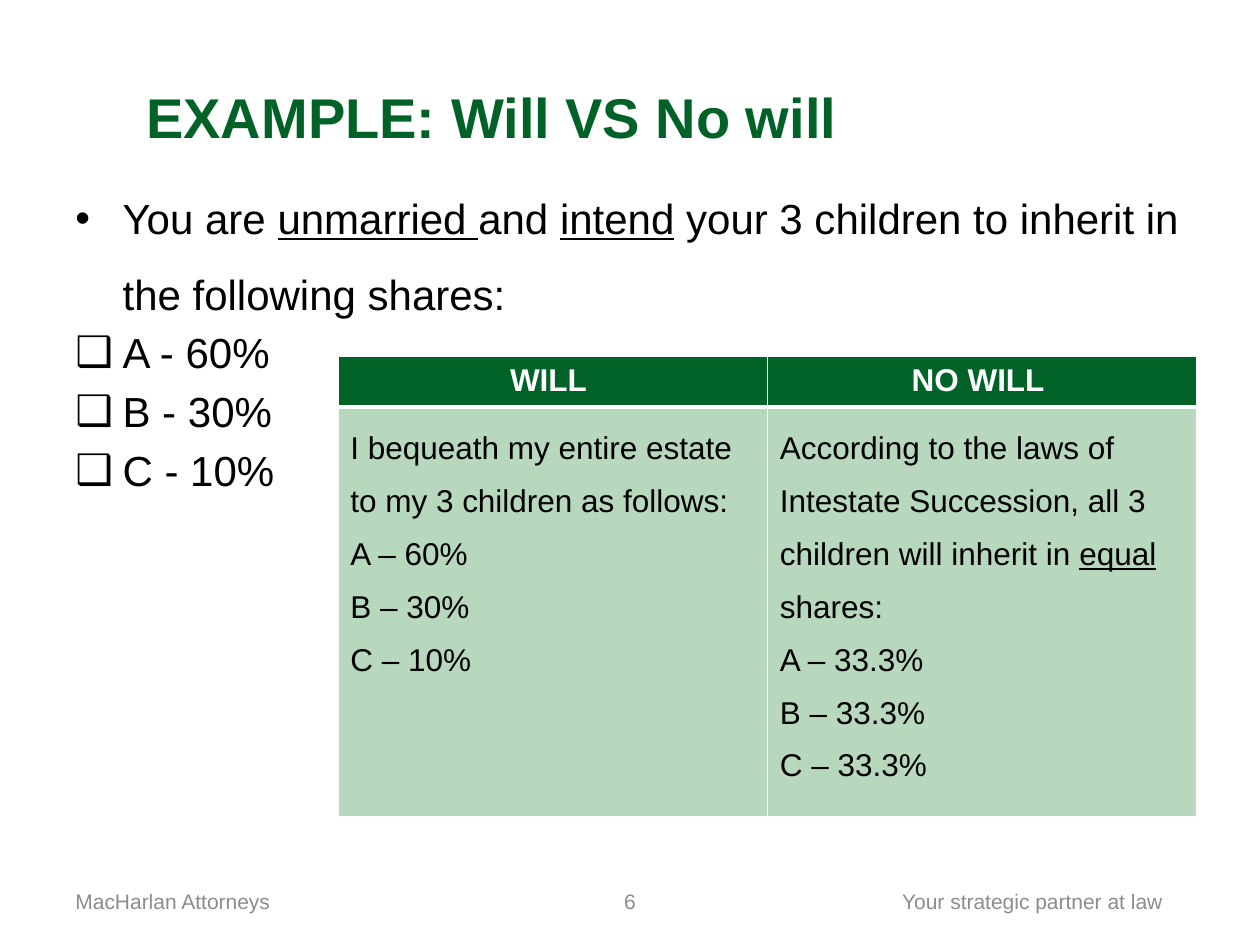
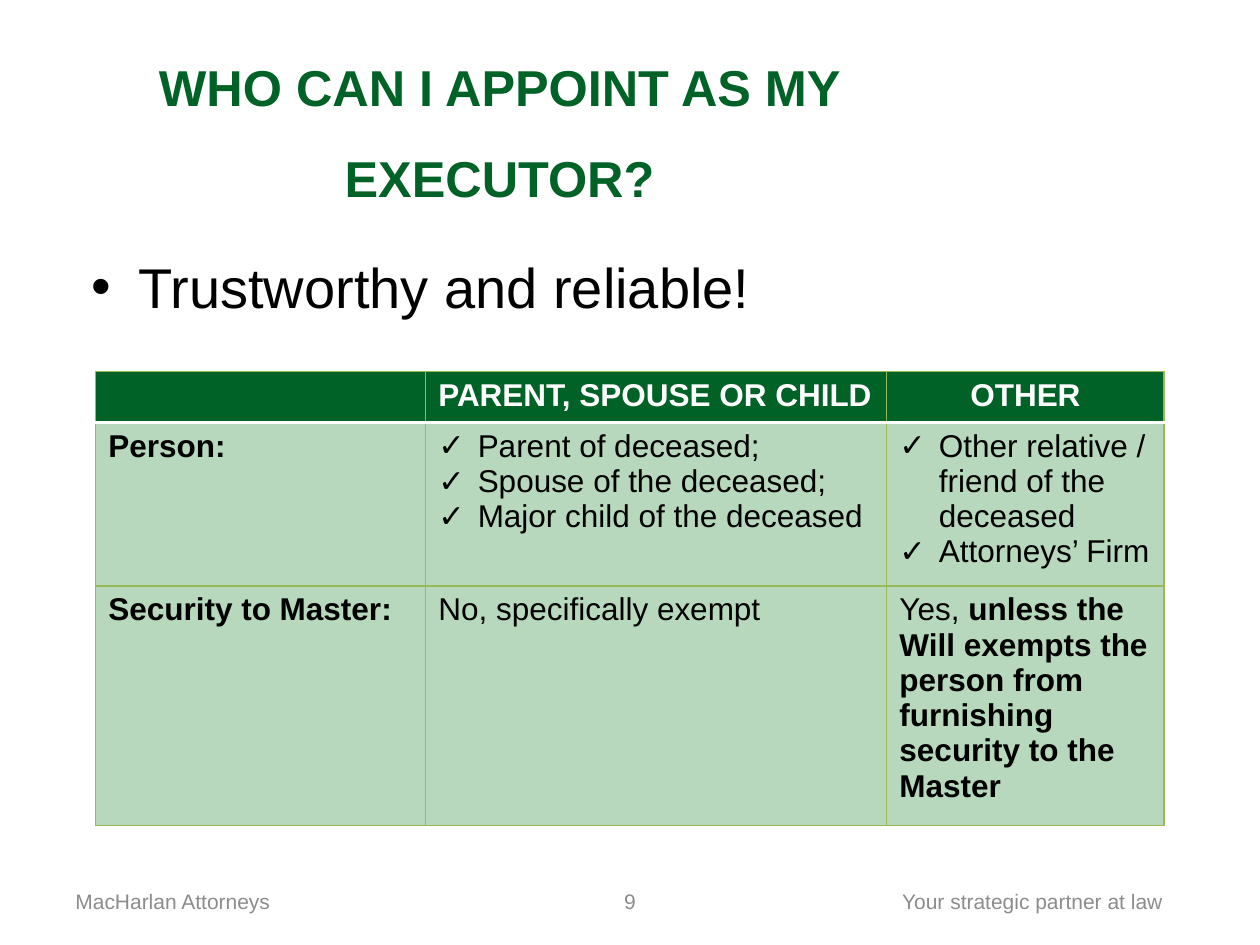
from dataclasses import dataclass

from lxml import etree
from pptx import Presentation
from pptx.dml.color import RGBColor
from pptx.enum import text
from pptx.oxml import ns
from pptx.util import Pt

GREEN, PALE_GREEN, OLIVE = "006227", "B7D8BC", "98B955"
WHITE, BLACK, GREY = "FFFFFF", "000000", "8C8C8C"
FONT = "Arial"
LEFT, CENTER = text.PP_ALIGN.LEFT, text.PP_ALIGN.CENTER
TOP, MIDDLE = text.MSO_ANCHOR.TOP, text.MSO_ANCHOR.MIDDLE


@dataclass
class Para:
    """One paragraph; spans are (wording, marks) pairs with marks from 'b' and 'u'."""
    spans: list
    align: object = LEFT
    spacing: float = None
    before: float = 0
    bullet: str = ""
    indent: float = 27


def plain(wording, marks="", **layout):
    return Para([(wording, marks)], **layout)


def ticks(*items):
    return [plain(item, bullet="✓", indent=22.5) for item in items]


def spaced(*items):
    return [plain(item, spacing=1.5) for item in items]


FOOTERS = [  # left, width, wording, alignment
    (36, 168, "MacHarlan Attorneys", LEFT),
    (276, 168, "{number}", CENTER),
    (496, 188, "Your strategic partner at law", CENTER),
]

SLIDES = [
    {
        "number": 6,
        "title": plain("EXAMPLE: Will VS No will ", "b", align=CENTER),
        "title_size": 32,
        "body": [
            Para([("You are ", ""), ("unmarried ", "u"), ("and ", ""), ("intend", "u"),
                  (" your 3 children to inherit in the following shares:", "")],
                 spacing=1.5, bullet="•"),
            *(plain(share, before=4.8, bullet="❑")
              for share in ("A - 60%", "B - 30%", "C - 10%")),
        ],
        "body_at": (36, 92),
        "body_size": 24,
        "table": {
            "at": (193, 203.8),
            "columns": [245.5, 245.5],
            "rows": [28, 222],
            "grid": (WHITE, 1),
            "rule": (WHITE, 3),
            "cells": [
                [[plain("WILL ", "b", align=CENTER)],
                 [plain("NO WILL ", "b", align=CENTER)]],
                [spaced("I bequeath my entire estate to my 3 children as follows:",
                        "A – 60%", "B – 30%", "C – 10%"),
                 [Para([("According to the laws of Intestate Succession, "
                         "all 3 children will inherit in ", ""),
                        ("equal ", "u"), ("shares:", "")], spacing=1.5),
                  *spaced("A – 33.3%", "B – 33.3%", "C – 33.3%")]],
            ],
        },
    },
    {
        "number": 9,
        "title": plain("WHO CAN I APPOINT AS MY EXECUTOR?", "b", align=CENTER, spacing=1.5),
        "title_size": 28.8,
        "body": [plain("Trustworthy and reliable!", bullet="•")],
        "body_at": (45, 140.5),
        "body_size": 32,
        "table": {
            "at": (54.7, 212.4),
            "columns": [188.6, 263.5, 158.4],
            "rows": [27, 88, 128],
            "grid": (OLIVE, 0.75),
            "rule": (WHITE, 2),
            "cells": [
                [[], [plain("PARENT, SPOUSE OR CHILD", "b")],
                 [plain("OTHER", "b", align=CENTER)]],
                [[plain("Person:", "b")],
                 ticks("Parent of deceased;", "Spouse of the deceased;",
                       "Major child of the deceased"),
                 ticks("Other relative / friend of the deceased", "Attorneys’ Firm")],
                [[plain("Security to Master:", "b")],
                 [plain("No, specifically exempt")],
                 [Para([("Yes, ", ""),
                        ("unless the Will exempts the person from furnishing "
                         "security to the Master", "b")])]],
            ],
        },
    },
]


def color(value):
    return RGBColor.from_string(value)


def add_bullet(para, mark, indent):
    props = para._p.get_or_add_pPr()
    props.set("marL", str(Pt(indent)))
    props.set("indent", str(-Pt(indent)))
    etree.SubElement(props, ns.qn("a:buFont"), typeface=FONT)
    etree.SubElement(props, ns.qn("a:buChar"), char=mark)


def write(frame, paras, size, ink):
    """Fill a text frame with paragraphs in one size and colour."""
    for index, item in enumerate(paras):
        para = frame.add_paragraph() if index else frame.paragraphs[0]
        para.alignment = item.align
        if item.bullet:
            add_bullet(para, item.bullet, item.indent)
        if item.spacing:
            para.line_spacing = item.spacing
        if item.before:
            para.space_before = Pt(item.before)
        for wording, marks in item.spans:
            span = para.add_run()
            span.text = wording
            font = span.font
            font.name, font.size, font.color.rgb = FONT, Pt(size), color(ink)
            font.bold, font.underline = "b" in marks, "u" in marks


def add_text(page, at, paras, size, ink, anchor):
    box = page.shapes.add_textbox(*map(Pt, at))
    frame = box.text_frame
    frame.word_wrap = True
    frame.vertical_anchor = anchor
    write(frame, paras, size, ink)


def set_borders(cell, sides):
    """Draw cell borders; they must precede the fill in the cell properties."""
    props = cell._tc.get_or_add_tcPr()
    for place, side in enumerate("LRTB"):
        ink, width = sides[side]
        line = etree.Element(ns.qn(f"a:ln{side}"), w=str(Pt(width)))
        fill = etree.SubElement(line, ns.qn("a:solidFill"))
        etree.SubElement(fill, ns.qn("a:srgbClr"), val=ink)
        props.insert(place, line)


def add_grid(page, content):
    columns, rows = content["columns"], content["rows"]
    frame = page.shapes.add_table(
        len(rows), len(columns),
        *map(Pt, (*content["at"], sum(columns), sum(rows))))
    table = frame.table
    table.horz_banding = False
    for column, width in zip(table.columns, columns):
        column.width = Pt(width)
    for row, height in zip(table.rows, rows):
        row.height = Pt(height)
    for r, row_cells in enumerate(content["cells"]):
        for c, paras in enumerate(row_cells):
            cell = table.cell(r, c)
            cell.fill.solid()
            cell.fill.fore_color.rgb = color(PALE_GREEN if r else GREEN)
            sides = dict.fromkeys("LRTB", content["grid"])
            if r < 2:
                sides["T" if r else "B"] = content["rule"]
            set_borders(cell, sides)
            write(cell.text_frame, paras, 18, BLACK if r else WHITE)


def add_footers(page, number):
    for left, width, wording, align in FOOTERS:
        para = plain(wording.format(number=number), align=align)
        add_text(page, (left, 500.4, width, 28.8), [para], 12, GREY, MIDDLE)


def main():
    deck = Presentation()
    deck.slide_width, deck.slide_height = Pt(720), Pt(540)
    for content in SLIDES:
        page = deck.slides.add_slide(deck.slide_layouts[6])
        add_text(page, (36, 21.6, 499, 90), [content["title"]],
                 content["title_size"], GREEN, MIDDLE)
        add_text(page, (*content["body_at"], 648, 356.4), content["body"],
                 content["body_size"], BLACK, TOP)
        add_footers(page, content["number"])
        add_grid(page, content["table"])
    deck.save("out.pptx")


if __name__ == "__main__":
    main()
